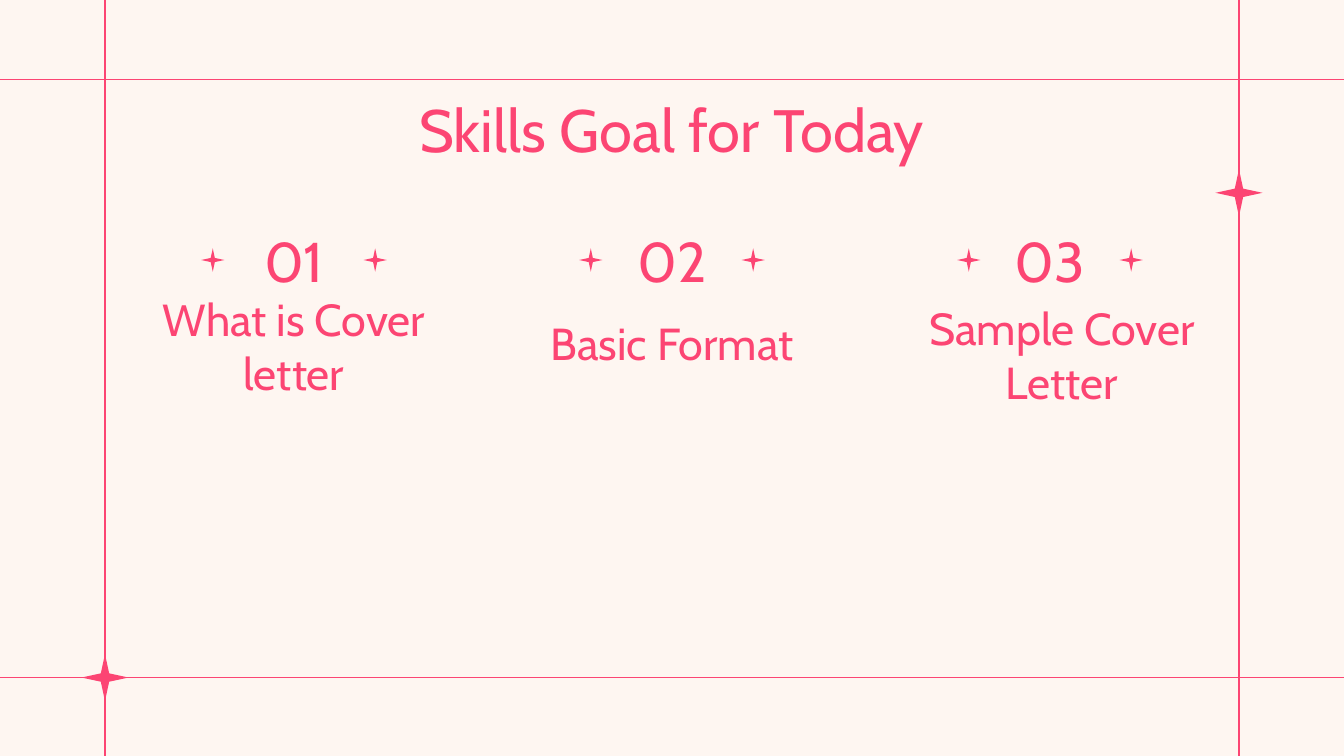
"""Build the skills goal slide with three numbered topics."""
from dataclasses import dataclass

from lxml import etree
from pptx import Presentation
from pptx.dml.color import RGBColor
from pptx.enum import shapes, text
from pptx.oxml.ns import qn
from pptx.util import Pt


@dataclass(frozen=True)
class Theme:
    """Colours, font and type sizes."""
    pink: RGBColor = RGBColor(0xFC, 0x45, 0x73)
    cream: RGBColor = RGBColor(0xFE, 0xF6, 0xF1)
    font: str = "Cabin"
    title: int = 32
    number: int = 30
    topic: int = 24


THEME = Theme()
WIDTH, HEIGHT = 720, 405
LEFT, RIGHT, TOP, BOTTOM = 56.25, 663.75, 42.5, 363
COLUMN = (RIGHT - LEFT) / 3
NUMBER_TOP, NUMBER_HEIGHT = 115.9, 46.8
STAR_GAP = 43.5
TOPICS = [
    ("01", "What is Cover letter", 1, COLUMN, 58.3),
    ("02", "Basic Format", 2, COLUMN, 42.5),
    ("03", "Sample Cover Letter", 3, 215.3, 63.4),
]


def add_rule(slide, x1, y1, x2, y2):
    """Draw a thin frame line."""
    rule = slide.shapes.add_connector(
        shapes.MSO_CONNECTOR.STRAIGHT, Pt(x1), Pt(y1), Pt(x2), Pt(y2))
    rule.line.color.rgb = THEME.pink
    rule.line.width = Pt(0.75)
    etree.SubElement(rule._element.spPr, qn("a:effectLst"))


def add_star(slide, x, y, size):
    """Draw a four-point star centred on x, y."""
    star = slide.shapes.add_shape(
        shapes.MSO_SHAPE.STAR_4_POINT,
        Pt(x - size / 2), Pt(y - size / 2), Pt(size), Pt(size))
    star.adjustments[0] = 0.125
    star.shadow.inherit = False
    star.fill.solid()
    star.fill.fore_color.rgb = THEME.pink
    star.line.fill.background()


def set_text(shape, box, words, size, anchor):
    """Place a text shape and fill it with one centred run."""
    shape.left, shape.top, shape.width, shape.height = map(Pt, box)
    frame = shape.text_frame
    frame.word_wrap = True
    frame.auto_size = text.MSO_AUTO_SIZE.NONE
    frame.vertical_anchor = anchor
    frame.margin_left = frame.margin_right = Pt(7.2)
    frame.margin_top = frame.margin_bottom = Pt(7.2)
    para = frame.paragraphs[0]
    para.alignment = text.PP_ALIGN.CENTER
    para.line_spacing = 1.0
    para.space_before = para.space_after = Pt(0)
    props = para._p.get_or_add_pPr()
    props.set("marL", "0")
    props.set("indent", "0")
    etree.SubElement(props, qn("a:buNone"))
    run = para.add_run()
    run.text = words
    run.font.name = THEME.font
    run.font.size = Pt(size)
    run.font.bold = False
    run.font.color.rgb = THEME.pink


def add_topic(slide, left, number, words, index, width, height):
    """Add a number between two stars with its topic below."""
    box = slide.shapes.add_textbox(0, 0, 0, 0)
    set_text(box, (left, NUMBER_TOP, COLUMN, NUMBER_HEIGHT), number,
             THEME.number, text.MSO_ANCHOR.MIDDLE)
    set_text(slide.placeholders[index],
             (left, NUMBER_TOP + NUMBER_HEIGHT, width, height), words,
             THEME.topic, text.MSO_ANCHOR.BOTTOM)
    for shift in (-STAR_GAP, STAR_GAP):
        add_star(slide, left + COLUMN / 2 + shift,
                 NUMBER_TOP + NUMBER_HEIGHT / 2, 12.5)


def main():
    """Build and save the slide."""
    deck = Presentation()
    deck.slide_width, deck.slide_height = Pt(WIDTH), Pt(HEIGHT)
    layout = deck.slide_layouts.get_by_name("Comparison")
    slide = deck.slides.add_slide(layout)
    slide.background.fill.solid()
    slide.background.fill.fore_color.rgb = THEME.cream
    for x in (LEFT, RIGHT):
        add_rule(slide, x, 0, x, HEIGHT)
    for y in (TOP, BOTTOM):
        add_rule(slide, 0, y, WIDTH, y)
    set_text(slide.shapes.title, (LEFT, TOP, RIGHT - LEFT, 45.4),
             "Skills Goal for Today", THEME.title, text.MSO_ANCHOR.TOP)
    for order, topic in enumerate(TOPICS):
        add_topic(slide, LEFT + order * COLUMN, *topic)
    spare = slide.placeholders[4]._element
    spare.getparent().remove(spare)
    add_star(slide, LEFT, BOTTOM, 25.2)
    add_star(slide, RIGHT, 103.3, 25.2)
    deck.save("out.pptx")


if __name__ == "__main__":
    main()
